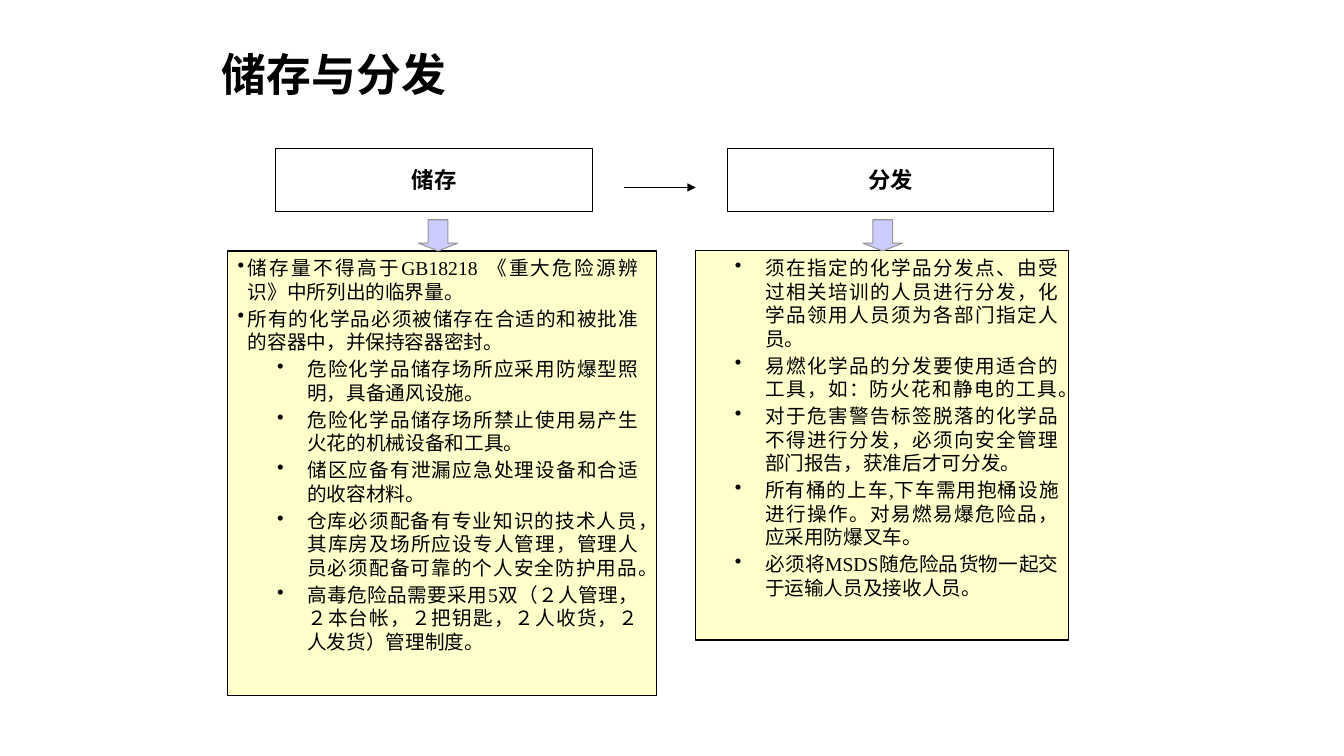
from lxml.etree import SubElement
from pptx import Presentation
from pptx.dml.color import RGBColor
from pptx.enum.shapes import MSO_CONNECTOR as Connector, MSO_SHAPE as Shape
from pptx.enum.text import MSO_ANCHOR as Anchor, MSO_AUTO_SIZE as AutoSize, PP_ALIGN as Align
from pptx.oxml.ns import qn
from pptx.util import Emu, Pt

EMU_PER_PX = 9144  # 100 px to the inch


def px(length):
    return Emu(length * EMU_PER_PX)


def color(hex_string):
    return RGBColor.from_string(hex_string)


def write(paragraph, text, size=14, bold=False, align=Align.LEFT, level=0,
          indent=None, hanging=0, space_before=0):
    """Put text in a paragraph; an indent makes it a bullet item."""
    paragraph.alignment = align
    paragraph.level = level
    paragraph.space_before = Pt(space_before)
    if indent is not None:
        properties = paragraph._p.get_or_add_pPr()
        properties.set("marL", str(px(indent)))
        properties.set("indent", str(-px(hanging)))
        SubElement(properties, qn("a:buChar")).set("char", "•")
    run = paragraph.add_run()
    run.text = text
    run.font.name = SlideBuilder.FONT
    run.font.size = Pt(size)
    run.font.bold = bold
    run.font.color.rgb = color(SlideBuilder.INK)


class SlideBuilder:
    FONT = "Times New Roman"
    INK = "000000"
    PANEL = "FFFFCC"
    ARROW = "CCCCFF"
    ARROW_EDGE = "969696"
    LINE_WIDTH = Pt(0.75)

    def __init__(self, presentation):
        self.slide = presentation.slides.add_slide(presentation.slide_layouts[5])

    def title(self, text, left, top, width, height):
        title = self.slide.shapes.title
        title.left, title.top = px(left), px(top)
        title.width, title.height = px(width), px(height)
        frame = title.text_frame
        frame.auto_size = AutoSize.NONE
        frame.vertical_anchor = Anchor.MIDDLE
        write(frame.paragraphs[0], text, size=32, bold=True)

    def shape(self, kind, left, top, width, height, fill=None, line=INK):
        shape = self.slide.shapes.add_shape(
            kind, px(left), px(top), px(width), px(height))
        shape.shadow.inherit = False
        if fill:
            shape.fill.solid()
            shape.fill.fore_color.rgb = color(fill)
        else:
            shape.fill.background()
        shape.line.color.rgb = color(line)
        shape.line.width = self.LINE_WIDTH
        return shape

    def header(self, text, left, top, width, height):
        frame = self.shape(Shape.RECTANGLE, left, top, width, height).text_frame
        frame.word_wrap = False
        frame.vertical_anchor = Anchor.MIDDLE
        write(frame.paragraphs[0], text, size=16, bold=True, align=Align.CENTER)

    def bullets(self, items, left, top, width, height):
        """Items are (text, level, indent, hanging)."""
        box = self.slide.shapes.add_textbox(px(left), px(top), px(width), px(height))
        frame = box.text_frame
        frame.word_wrap = True
        frame.auto_size = AutoSize.SHAPE_TO_FIT_TEXT
        for index, (text, level, indent, hanging) in enumerate(items):
            paragraph = frame.add_paragraph() if index else frame.paragraphs[0]
            write(paragraph, text, align=Align.JUSTIFY, level=level, indent=indent,
                  hanging=hanging, space_before=2.5 if index else 0)

    def down_arrow(self, left, top, width, height):
        arrow = self.shape(Shape.DOWN_ARROW, left, top, width, height,
                           self.ARROW, self.ARROW_EDGE)
        arrow.adjustments[0], arrow.adjustments[1] = 0.5, 0.25

    def arrow(self, start_x, end_x, y):
        connector = self.slide.shapes.add_connector(
            Connector.STRAIGHT, px(start_x), px(y), px(end_x), px(y))
        connector.line.color.rgb = color(self.INK)
        connector.line.width = self.LINE_WIDTH
        SubElement(connector.line._get_or_add_ln(), qn("a:tailEnd")).set("type", "triangle")
        SubElement(connector._element.spPr, qn("a:effectLst"))


STORAGE_RULES = [
    "储存量不得高于GB18218 《重大危险源辨识》中所列出的临界量。",
    "所有的化学品必须被储存在合适的和被批准的容器中，并保持容器密封。",
]
STORAGE_DETAILS = [
    "危险化学品储存场所应采用防爆型照明，具备通风设施。",
    "危险化学品储存场所禁止使用易产生火花的机械设备和工具。",
    "储区应备有泄漏应急处理设备和合适的收容材料。",
    "仓库必须配备有专业知识的技术人员，其库房及场所应设专人管理，管理人员必须配备可靠的个人安全防护用品。",
    "高毒危险品需要采用5双（２人管理，２本台帐，２把钥匙，２人收货，２人发货）管理制度。",
]
DISTRIBUTION_RULES = [
    "须在指定的化学品分发点、由受过相关培训的人员进行分发，化学品领用人员须为各部门指定人员。",
    "易燃化学品的分发要使用适合的工具，如：防火花和静电的工具。",
    "对于危害警告标签脱落的化学品不得进行分发，必须向安全管理部门报告，获准后才可分发。",
    "所有桶的上车,下车需用抱桶设施进行操作。对易燃易爆危险品，应采用防爆叉车。",
    "必须将MSDS随危险品货物一起交于运输人员及接收人员。",
]


def main():
    presentation = Presentation()
    presentation.slide_width, presentation.slide_height = px(1333), px(750)
    builder = SlideBuilder(presentation)
    builder.title("储存与分发", 210, 36, 848, 75)

    storage = ([(text, 0, 10, 10) for text in STORAGE_RULES]
               + [(text, 1, 69, 30) for text in STORAGE_DETAILS])
    distribution = [(text, 1, 59, 30) for text in DISTRIBUTION_RULES]

    # Columns: header (left, width), panel (left, width, height),
    # text (width, height), down arrow left
    columns = [
        ("储存", (273, 315), (226, 425, 441), (417, 415), 415, storage),
        ("分发", (722, 323), (690, 370, 386), (370, 359), 856, distribution),
    ]
    for name, header, panel, text_size, arrow_left, items in columns:
        builder.header(name, header[0], 147, header[1], 63)
        builder.shape(Shape.RECTANGLE, panel[0], 249, *panel[1:], fill=builder.PANEL)
        builder.bullets(items, panel[0], 249, *text_size)
        builder.down_arrow(arrow_left, 218, 39, 31)

    # Flow from storage to distribution
    builder.arrow(619, 690, 186)
    presentation.save("out.pptx")


if __name__ == "__main__":
    main()
